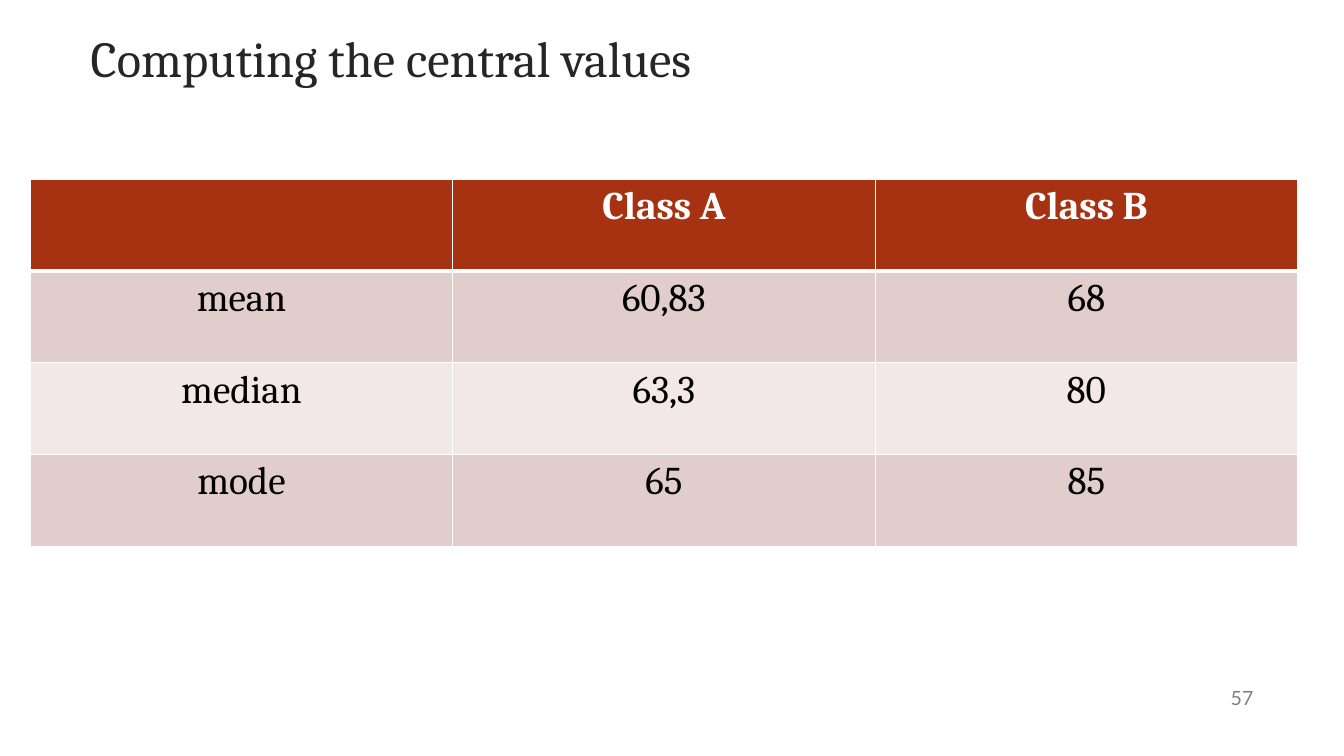
from dataclasses import dataclass

from lxml import etree
from pptx import Presentation
from pptx import util as u
from pptx.dml.color import RGBColor
from pptx.enum import text
from pptx.oxml.ns import qn


@dataclass(frozen=True)
class Theme:
    serif: str = "Cambria"
    sans: str = "Lato"
    title_ink: str = "262626"
    body_ink: str = "000000"
    number_ink: str = "808080"
    white: str = "FFFFFF"
    header: str = "A63212"
    bands: tuple = ("E1CECC", "F1E8E7")
    title_size: int = 36
    table_size: int = 28
    number_size: int = 14
    rule: int = 1
    heavy_rule: int = 3


class SlideBuilder:
    def __init__(self, deck, theme):
        self.theme = theme
        self.slide = deck.slides.add_slide(deck.slide_layouts[5])

    def set_text(self, frame, words, font, size, ink, align, bold=False):
        frame.text = words
        paragraph = frame.paragraphs[0]
        paragraph.alignment = align
        paragraph.font.name = font
        paragraph.font.size = u.Pt(size)
        paragraph.font.bold = bold
        paragraph.font.color.rgb = RGBColor.from_string(ink)

    def title(self, words, left, top, width, height):
        heading = self.slide.shapes.title
        heading.left, heading.top = u.Inches(left), u.Inches(top)
        heading.width, heading.height = u.Inches(width), u.Inches(height)
        heading.text_frame.vertical_anchor = text.MSO_ANCHOR.MIDDLE
        self.set_text(heading.text_frame, words, self.theme.serif,
                      self.theme.title_size, self.theme.title_ink, text.PP_ALIGN.LEFT)

    def page_number(self, words, left, top, width, height):
        box = self.slide.shapes.add_textbox(
            u.Inches(left), u.Inches(top), u.Inches(width), u.Inches(height))
        box.text_frame.word_wrap = True
        box.text_frame.vertical_anchor = text.MSO_ANCHOR.MIDDLE
        self.set_text(box.text_frame, words, self.theme.sans,
                      self.theme.number_size, self.theme.number_ink, text.PP_ALIGN.RIGHT)

    def borders(self, cell, top, bottom):
        """Draw white cell borders; top and bottom are widths in points."""
        properties = cell._tc.get_or_add_tcPr()
        widths = {"L": self.theme.rule, "R": self.theme.rule, "T": top, "B": bottom}
        for side, width in widths.items():
            line = etree.SubElement(properties, qn(f"a:ln{side}"), w=str(u.Pt(width)))
            fill = etree.SubElement(line, qn("a:solidFill"))
            etree.SubElement(fill, qn("a:srgbClr"), val=self.theme.white)

    def table(self, rows, left, top, column_width, row_height):
        theme = self.theme
        columns = len(rows[0])
        grid = self.slide.shapes.add_table(
            len(rows), columns, u.Inches(left), u.Inches(top),
            u.Inches(column_width * columns), u.Inches(row_height * len(rows))).table
        for r, row in enumerate(rows):
            is_header = r == 0
            fill = theme.header if is_header else theme.bands[(r - 1) % 2]
            ink = theme.white if is_header else theme.body_ink
            for c, words in enumerate(row):
                cell = grid.cell(r, c)
                self.borders(cell, theme.heavy_rule if r == 1 else theme.rule,
                             theme.heavy_rule if is_header else theme.rule)
                cell.fill.solid()
                cell.fill.fore_color.rgb = RGBColor.from_string(fill)
                self.set_text(cell.text_frame, words, theme.serif, theme.table_size,
                              ink, text.PP_ALIGN.CENTER, bold=is_header)


def main():
    deck = Presentation()
    deck.slide_width, deck.slide_height = u.Inches(13.33), u.Inches(7.5)
    page = SlideBuilder(deck, Theme())
    page.title("Computing the central values", 0.8, 0.13, 11.73, 0.87)
    central_values = [
        ("", "Class A", "Class B"),
        ("mean", "60,83", "68"),
        ("median", "63,3", "80"),
        ("mode", "65", "85"),
    ]
    page.table(central_values, 0.3, 1.78, column_width=4.19, row_height=0.91)
    page.page_number("57", 9.42, 6.72, 3.11, 0.4)
    deck.save("out.pptx")


if __name__ == "__main__":
    main()
